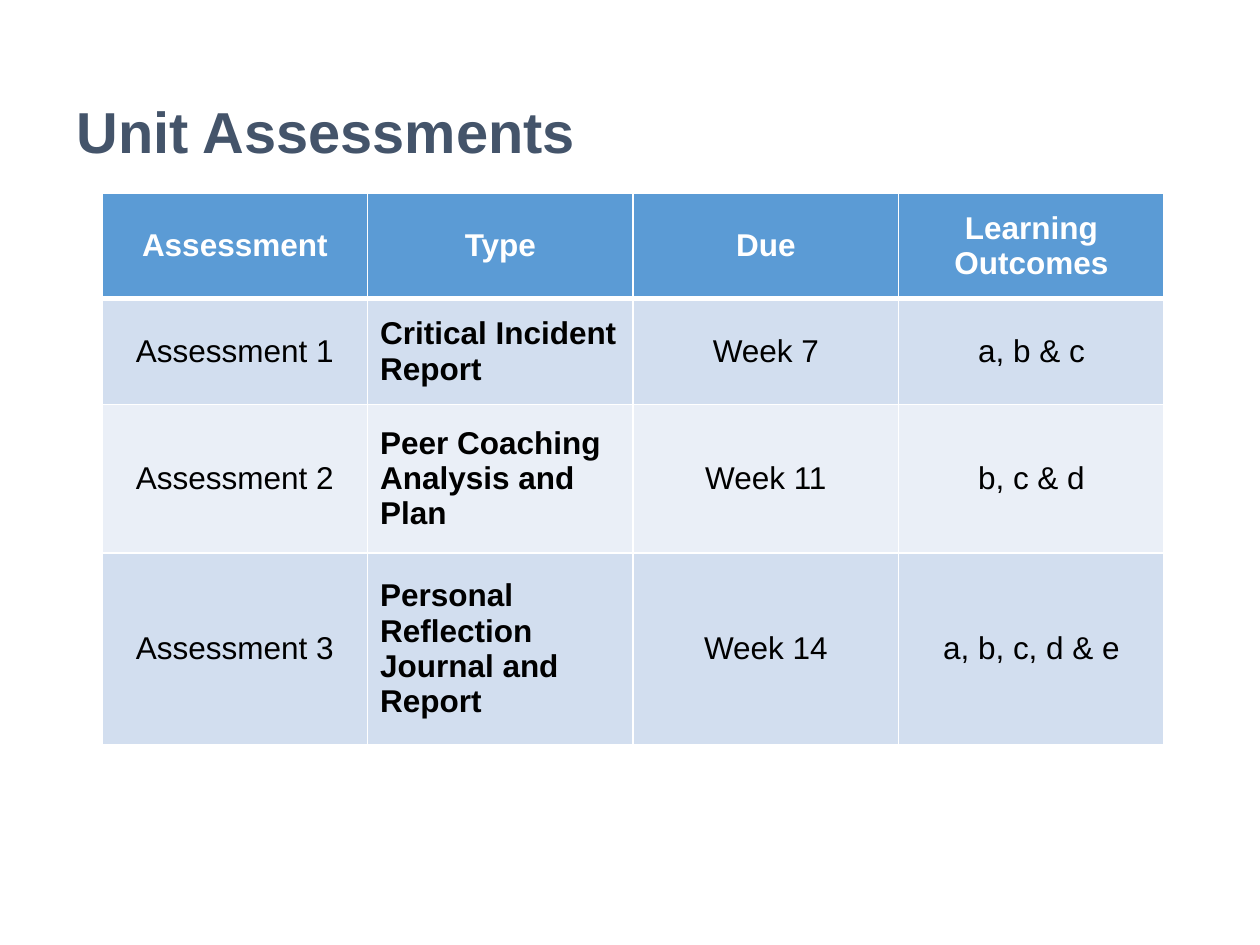
from lxml.etree import SubElement
from pptx import Presentation
from pptx.dml.color import RGBColor as RGB
from pptx.enum.text import MSO_ANCHOR as Anchor, PP_ALIGN as Align
from pptx.oxml.ns import qn
from pptx.util import Inches, Pt

COLORS = {
    "title": "44546A",
    "header": "5B9BD5",
    "band_dark": "D2DEEF",
    "band_light": "EAEFF7",
    "text": "000000",
    "white": "FFFFFF",
}
ASSESSMENTS = [
    ["Assessment", "Type", "Due", "Learning Outcomes"],
    ["Assessment 1", "Critical Incident Report", "Week 7", "a, b & c"],
    ["Assessment 2", "Peer Coaching Analysis and Plan", "Week 11", "b, c & d"],
    ["Assessment 3", "Personal Reflection Journal and Report", "Week 14", "a, b, c, d & e"],
]
ROW_HEIGHTS = [0.84, 0.84, 1.18, 1.52]
TYPE_COLUMN = 1


class SlideBuilder:
    font = "Arial"
    title_size = 33
    table_size = 18

    def __init__(self, slide):
        self.slide = slide

    def style(self, paragraph, size, color, bold):
        for run in paragraph.runs:
            run.font.name = self.font
            run.font.size = Pt(size)
            run.font.bold = bold
            run.font.color.rgb = RGB.from_string(COLORS[color])

    def title(self, wording, left, top, width, height):
        box = self.slide.shapes.add_textbox(
            Inches(left), Inches(top), Inches(width), Inches(height))
        frame = box.text_frame
        frame.word_wrap = True
        frame.vertical_anchor = Anchor.MIDDLE
        frame.text = wording
        heading = frame.paragraphs[0]
        heading.line_spacing = 0.9
        self.style(heading, self.title_size, "title", True)

    def borders(self, cell, widths):
        properties = cell._tc.get_or_add_tcPr()
        for side, width in widths.items():
            line = SubElement(properties, qn(f"a:ln{side}"), w=str(Pt(width)))
            fill = SubElement(line, qn("a:solidFill"))
            SubElement(fill, qn("a:srgbClr"), val=COLORS["white"])

    def cell(self, cell, wording, row, column):
        is_header = row == 0
        is_type = column == TYPE_COLUMN
        self.borders(cell, {"L": 1, "R": 1, "T": 3 if row == 1 else 1, "B": 3 if is_header else 1})
        band = "header" if is_header else "band_dark" if row % 2 else "band_light"
        cell.fill.solid()
        cell.fill.fore_color.rgb = RGB.from_string(COLORS[band])
        cell.vertical_anchor = Anchor.MIDDLE
        cell.text_frame.text = wording
        paragraph = cell.text_frame.paragraphs[0]
        paragraph.alignment = Align.LEFT if is_type and not is_header else Align.CENTER
        self.style(paragraph, self.table_size, "white" if is_header else "text", is_header or is_type)

    def table(self, rows, heights, left, top, width):
        table = self.slide.shapes.add_table(
            len(rows), len(rows[0]), Inches(left), Inches(top),
            Inches(width), Inches(sum(heights))).table
        for row, (wordings, height) in enumerate(zip(rows, heights)):
            table.rows[row].height = Inches(height)
            for column, wording in enumerate(wordings):
                self.cell(table.cell(row, column), wording, row, column)


def main():
    deck = Presentation()
    deck.slide_width, deck.slide_height = Inches(10), Inches(7.5)
    builder = SlideBuilder(deck.slides.add_slide(deck.slide_layouts[6]))
    builder.title("Unit Assessments", 0.51, 0.54, 9.01, 1.06)
    builder.table(ASSESSMENTS, ROW_HEIGHTS, 0.81, 1.53, 8.43)
    deck.save("out.pptx")


if __name__ == "__main__":
    main()
